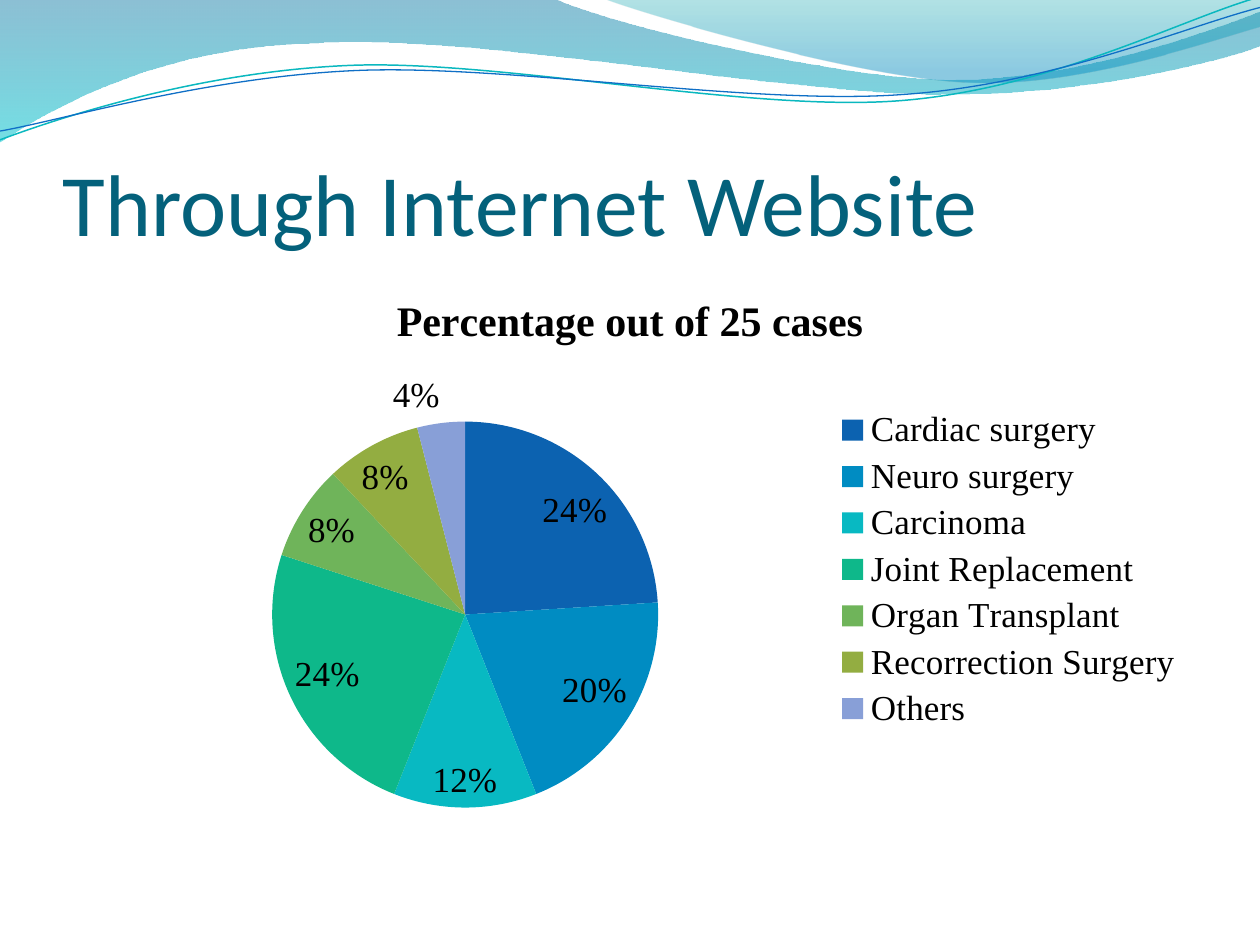
"""Build a slide with a wave banner, a title and a pie chart of surgery cases."""
import math

from lxml import etree
from pptx import Presentation
from pptx import util as u
from pptx.chart.data import CategoryChartData
from pptx.dml.color import RGBColor
from pptx.enum import chart as charts, text
from pptx.oxml.ns import qn

COLORS = {
    "title": "04617B", "text": "000000",
    "wave_top": "0074A1", "wave_bottom": "00C6CF",
    "crest_top": "00A1A9", "crest_bottom": "008BBF",
    "teal": "0AB8BF", "blue": "0F6FC6",
}
CASES = {
    "Cardiac surgery": (24, "0C62B0"),
    "Neuro surgery": (20, "008CC2"),
    "Carcinoma": (12, "08B9C2"),
    "Joint Replacement": (24, "0EB88A"),
    "Organ Transplant": (8, "6FB45A"),
    "Recorrection Surgery": (8, "93AD41"),
    "Others": (4, "889FD7"),
}
WAVE = [
    [(0, 0)], [(316.8, -0.7)],
    [(342.7, 12.2), (478.1, 45.4), (545.8, 45.4)],
    [(614.2, 45.4), (689.8, 18.7), (720, 6.5)],
    [(720.7, 25.9)],
    [(707.8, 31.7), (626.4, 54.7), (537.1, 54)],
    [(447.8, 54), (275, 20.2), (185, 24.5)],
    [(92.9, 25.9), (33.1, 59.8), (-0.7, 81.4)],
]
CREST = [
    [(344.9, -0.7)],
    [(366.5, 7.9), (491, 44.6), (553.7, 46.8)],
    [(616.3, 49.7), (691.9, 23), (720, 15.1)],
    [(720, 0)],
]
TEAL_RIPPLE = [
    [(0, 79.9)],
    [(34.6, 67), (113.8, 41), (199.4, 37.4)],
    [(284.4, 33.8), (427, 64.1), (513.4, 57.6)],
    [(599.8, 51.1), (675.4, 10.8), (718.6, -1.4)],
]
BLUE_RIPPLE = [
    [(0, 74.9)],
    [(33.8, 69.1), (118.1, 43.9), (203.8, 40.3)],
    [(290.2, 36.7), (429.8, 60.5), (516.2, 54)],
    [(601.9, 48.2), (677.5, 15.1), (720, 4.3)],
]
RIPPLE_TILT = -2.7


def color(name):
    return RGBColor.from_string(COLORS[name])


def turn(segments, center, degrees):
    cos, sin = math.cos(math.radians(degrees)), math.sin(math.radians(degrees))
    cx, cy = center
    return [[(cx + (x - cx) * cos - (y - cy) * sin, cy + (x - cx) * sin + (y - cy) * cos)
             for x, y in segment] for segment in segments]


def add_outline(slide, segments, close):
    first, *rest = [(u.Pt(x), u.Pt(y)) for segment in segments for x, y in segment]
    builder = slide.shapes.build_freeform(*first)
    builder.add_line_segments(rest, close=close)
    outline = builder.convert_to_shape()
    outline.shadow.inherit = False
    steps = iter(list(outline._element.iter(qn("a:lnTo"))))
    for segment in segments[1:]:
        strokes = [next(steps) for _ in segment]
        if len(strokes) == 3:
            curve = etree.Element(qn("a:cubicBezTo"))
            strokes[0].addprevious(curve)
            for stroke in strokes:
                curve.append(stroke[0])
                stroke.getparent().remove(stroke)
    return outline


def add_wave(slide, segments, stops):
    wave = add_outline(slide, segments, True)
    wave.line.fill.background()
    wave.fill.gradient()
    wave.fill.gradient_angle = 270
    for stop, (position, name, _) in zip(wave.fill.gradient_stops, stops):
        stop.position = position
        stop.color.rgb = color(name)
    tints = wave._element.spPr.iter(qn("a:srgbClr"))
    for tint, (_, _, opacity) in zip(tints, stops):
        etree.SubElement(tint, qn("a:alpha"), val=str(opacity * 1000))


def add_ripple(slide, segments, center, name, width):
    ripple = add_outline(slide, turn(segments, center, -RIPPLE_TILT), False)
    ripple.rotation = RIPPLE_TILT
    ripple.fill.background()
    ripple.line.color.rgb = color(name)
    ripple.line.width = u.Pt(width)


def set_font(font, face, size, name):
    font.name = face
    font.size = u.Pt(size)
    font.color.rgb = color(name)


def add_title(slide, wording):
    title = slide.shapes.add_textbox(u.Pt(36), u.Pt(55.4), u.Pt(648), u.Pt(90)).text_frame
    title.word_wrap = True
    title.vertical_anchor = text.MSO_ANCHOR.BOTTOM
    title.margin_left = title.margin_right = title.margin_bottom = 0
    title.margin_top = u.Pt(3.6)
    line = title.paragraphs[0]
    line.text = wording
    set_font(line.font, "Calibri", 50, "title")


def add_pie(slide, heading):
    data = CategoryChartData()
    data.categories = list(CASES)
    data.add_series("Series 1", [share for share, _ in CASES.values()])
    pie = slide.shapes.add_chart(charts.XL_CHART_TYPE.PIE, u.Pt(36), u.Pt(152.6),
                                 u.Pt(648), u.Pt(345.6), data).chart
    set_font(pie.font, "Times New Roman", 20, "text")
    pie.has_title = True
    caption = pie.chart_title.text_frame.paragraphs[0]
    caption.text = heading
    set_font(caption.font, "Times New Roman", 24, "text")
    caption.font.bold = True
    pie.has_legend = True
    pie.legend.position = charts.XL_LEGEND_POSITION.RIGHT
    pie.legend.include_in_layout = False
    plot = pie.plots[0]
    plot.vary_by_categories = True
    plot.has_data_labels = True
    labels = plot.data_labels
    labels.show_percentage = True
    labels.show_value = False
    labels.number_format = "0%"
    labels.number_format_is_linked = False
    labels.position = charts.XL_LABEL_POSITION.BEST_FIT
    for i, (_, shade) in enumerate(CASES.values()):
        wedge = plot.series[0].points[i].format
        wedge.fill.solid()
        wedge.fill.fore_color.rgb = RGBColor.from_string(shade)


def main():
    deck = Presentation()
    deck.slide_width, deck.slide_height = u.Pt(720), u.Pt(540)
    slide = deck.slides.add_slide(deck.slide_layouts[6])
    add_wave(slide, WAVE, [(0, "wave_top", 45), (1, "wave_bottom", 55)])
    add_wave(slide, CREST, [(0, "crest_top", 30), (0.8, "crest_bottom", 45)])
    add_ripple(slide, TEAL_RIPPLE, (359.3, 41.4), "teal", 0.85)
    add_ripple(slide, BLUE_RIPPLE, (359.6, 42.5), "blue", 0.75)
    add_title(slide, "Through Internet Website")
    add_pie(slide, "Percentage out of 25 cases")
    deck.save("out.pptx")


if __name__ == "__main__":
    main()
